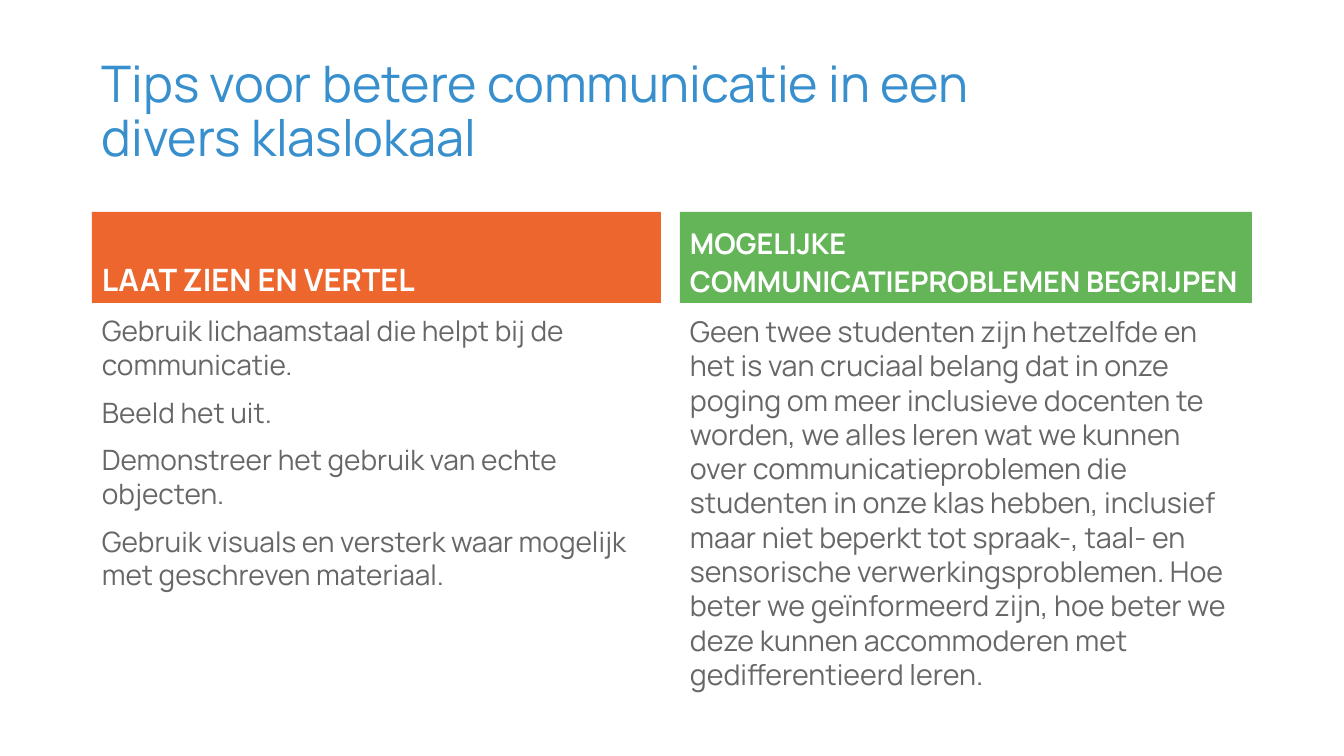
import pptx
import pptx.util
import pptx.dml.color
import pptx.enum.shapes
import pptx.enum.text

PX = 914400 / 100.8
ANCHOR = pptx.enum.text.MSO_ANCHOR
THEME = {
    "font": "Manrope",
    "blue": "378FCD", "orange": "EC662D", "green": "64B558",
    "white": "FFFFFF", "grey": "676766",
    "title_size": 36, "header_size": 22, "long_size": 20.4, "body_size": 20,
}


def px(length):
    return pptx.util.Emu(round(length * PX))


def write(shape, paragraphs, size, color, anchor, spacing, bold=False):
    frame = shape.text_frame
    frame.word_wrap = True
    frame.vertical_anchor = anchor
    for index, text in enumerate(paragraphs):
        paragraph = frame.paragraphs[0] if index == 0 else frame.add_paragraph()
        paragraph.alignment = pptx.enum.text.PP_ALIGN.LEFT
        paragraph.line_spacing = spacing
        paragraph.space_before = pptx.util.Pt(10 if index else 0)
        run = paragraph.add_run()
        run.text = text
        run.font.name = THEME["font"]
        run.font.size = pptx.util.Pt(THEME[size])
        run.font.bold = bold
        run.font.color.rgb = pptx.dml.color.RGBColor.from_string(THEME[color])


deck = pptx.Presentation()
deck.slide_width, deck.slide_height = px(1344), px(756)
slide = deck.slides.add_slide(deck.slide_layouts[6])

# Title
title = slide.shapes.add_textbox(px(92), px(40), px(943), px(146))
write(title, ["Tips voor betere communicatie in een divers klaslokaal"],
      "title_size", "blue", ANCHOR.MIDDLE, 0.9)

# Two columns: left, width, header top, fill, header size, header spacing, body size, header, body
columns = [
    (92, 569, 212, "orange", "header_size", 0.9, "body_size", "LAAT ZIEN EN VERTEL", [
        "Gebruik lichaamstaal die helpt bij de communicatie.",
        "Beeld het uit.",
        "Demonstreer het gebruik van echte objecten.",
        "Gebruik visuals en versterk waar mogelijk met geschreven materiaal.",
    ]),
    (680, 572, 212, "green", "long_size", 1.1, "long_size",
     "MOGELIJKE COMMUNICATIEPROBLEMEN BEGRIJPEN", [
        "Geen twee studenten zijn hetzelfde en het is van cruciaal belang dat in onze "
        "poging om meer inclusieve docenten te worden, we alles leren wat we kunnen over "
        "communicatieproblemen die studenten in onze klas hebben, inclusief maar niet "
        "beperkt tot spraak-, taal- en sensorische verwerkingsproblemen. Hoe beter we "
        "geïnformeerd zijn, hoe beter we deze kunnen accommoderen met gedifferentieerd "
        "leren.",
     ]),
]
HEADER_BOTTOM, BODY_TOP, BODY_HEIGHT = 303, 309, 406

for left, width, top, fill, header_size, spacing, body_size, heading, tips in columns:
    # Coloured header
    header = slide.shapes.add_shape(pptx.enum.shapes.MSO_SHAPE.RECTANGLE,
                                    px(left), px(top), px(width), px(HEADER_BOTTOM - top))
    header.shadow.inherit = False
    header.fill.solid()
    header.fill.fore_color.rgb = pptx.dml.color.RGBColor.from_string(THEME[fill])
    header.line.fill.background()
    write(header, [heading], header_size, "white", ANCHOR.BOTTOM, spacing, bold=True)

    # Tips below the header
    body = slide.shapes.add_textbox(px(left), px(BODY_TOP), px(width), px(BODY_HEIGHT))
    write(body, tips, body_size, "grey", ANCHOR.TOP, 1.0)

deck.save("out.pptx")
